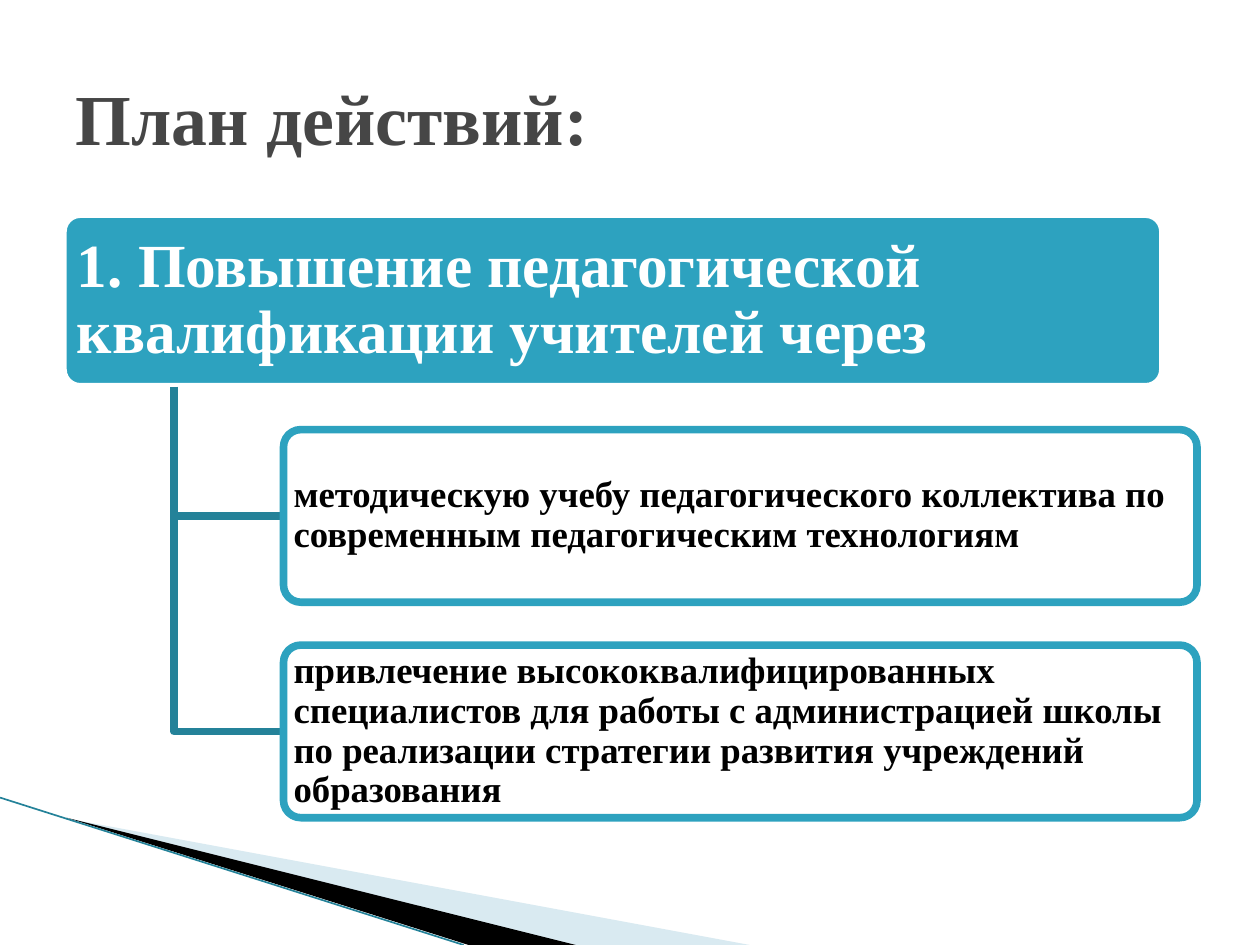
from lxml import etree
from pptx import Presentation
from pptx import util as u
from pptx.dml.color import RGBColor
from pptx.enum import shapes, text
from pptx.oxml.ns import qn

# Content
TITLE = "План действий:"
HEADING = "1. Повышение педагогической квалификации учителей через"
ACTIONS = [
    "методическую учебу педагогического коллектива по современным педагогическим технологиям",
    "привлечение высококвалифицированных специалистов для работы с администрацией школы "
    "по реализации стратегии развития учреждений образования",
]

# Design
FONT = "Times New Roman"
TEAL, DARK_TEAL, WHITE, BLACK, GREY = "2DA2BF", "248299", "FFFFFF", "000000", "464646"
LINE_WIDTH = 4.33
WEDGES = [  # points, colour, opacity in percent
    ([(0.55, 6.5), (5.95, 7.5), (4.56, 7.5)], "A0CBDC", 40),
    ([(0.53, 6.49), (4.57, 7.5), (3.72, 7.5)], BLACK, 100),
]

# Layout
HEADING_LEFT, HEADING_TOP, HEADING_WIDTH = 0.5, 1.7, 8.73
ACTION_LEFT, ACTION_WIDTH = 2.25, 7.25
BOX_HEIGHT, STEP = 1.37, 1.71
TRUNK_X = 1.38

presentation = Presentation()
presentation.slide_width, presentation.slide_height = u.Inches(10), u.Inches(7.5)
slide = presentation.slides.add_slide(presentation.slide_layouts[6])


def color(value):
    return RGBColor.from_string(value)


def fill_shape(shape, value, opacity=100):
    shape.fill.solid()
    shape.fill.fore_color.rgb = color(value)
    if opacity < 100:
        color_element = shape.fill._xPr.find(qn("a:solidFill"))[0]
        etree.SubElement(color_element, qn("a:alpha"), val=str(opacity * 1000))


def set_line(shape, value, width=LINE_WIDTH):
    shape.line.color.rgb = color(value)
    shape.line.width = u.Pt(width)


def write(shape, words, size, value, inset_x=0.1, inset_y=0.05, spacing=1.0):
    frame = shape.text_frame
    frame.word_wrap = True
    frame.vertical_anchor = text.MSO_ANCHOR.MIDDLE
    frame.margin_left = frame.margin_right = u.Inches(inset_x)
    frame.margin_top = frame.margin_bottom = u.Inches(inset_y)
    paragraph = frame.paragraphs[0]
    paragraph.alignment = text.PP_ALIGN.LEFT
    paragraph.line_spacing = spacing
    run = paragraph.add_run()
    run.text = words
    run.font.name, run.font.size, run.font.bold = FONT, u.Pt(size), True
    run.font.color.rgb = color(value)


def add_path(points, close):
    places = [(u.Inches(x), u.Inches(y)) for x, y in points]
    builder = slide.shapes.build_freeform(*places[0])
    builder.add_line_segments(places[1:], close=close)
    shape = builder.convert_to_shape()
    shape.shadow.inherit = False
    return shape


def add_box(left, top, width, fill, line, opacity=100):
    shape = slide.shapes.add_shape(
        shapes.MSO_SHAPE.ROUNDED_RECTANGLE,
        u.Inches(left), u.Inches(top), u.Inches(width), u.Inches(BOX_HEIGHT))
    shape.adjustments[0] = 0.1
    shape.shadow.inherit = False
    fill_shape(shape, fill, opacity)
    set_line(shape, line)
    return shape


# Corner decoration
for points, value, opacity in WEDGES:
    wedge = add_path(points, True)
    fill_shape(wedge, value, opacity)
    wedge.line.fill.background()
edge = slide.shapes.add_connector(
    shapes.MSO_CONNECTOR.STRAIGHT, u.Inches(0), u.Inches(6.33), u.Inches(3.68), u.Inches(7.5))
set_line(edge, DARK_TEAL, 0.95)
etree.SubElement(edge._element.spPr, qn("a:effectLst"))

# Heading box
heading = add_box(HEADING_LEFT, HEADING_TOP, HEADING_WIDTH, TEAL, WHITE)
write(heading, HEADING, 35, WHITE, 0.07, 0.05, 0.9)

# Action boxes, each joined to the heading by an elbow
trunk_top = HEADING_TOP + BOX_HEIGHT
for index, action in enumerate(ACTIONS):
    top = HEADING_TOP + STEP * (index + 1)
    middle = top + BOX_HEIGHT / 2
    elbow = add_path([(TRUNK_X, trunk_top), (TRUNK_X, middle), (ACTION_LEFT, middle)], False)
    elbow.fill.background()
    set_line(elbow, DARK_TEAL)
    box = add_box(ACTION_LEFT, top, ACTION_WIDTH, WHITE, TEAL, 90)
    write(box, action, 21, BLACK, 0.04, 0.03, 0.9)

# Title
title = slide.shapes.add_textbox(u.Inches(0.5), u.Inches(0.3), u.Inches(9), u.Inches(1.25))
write(title, TITLE, 41, GREY)

presentation.save("out.pptx")
